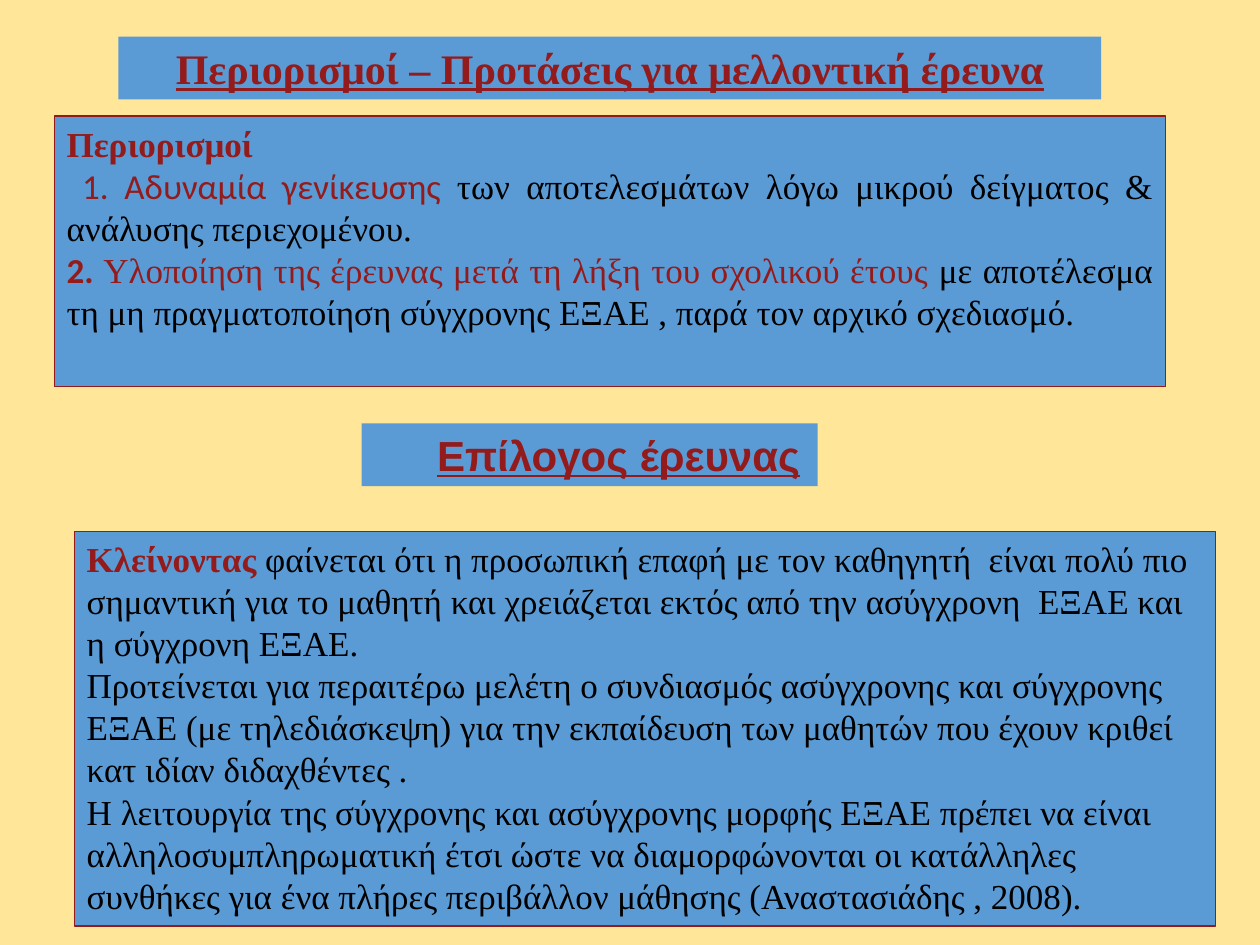
"""Build a slide on research limitations, proposals and the epilogue."""
from dataclasses import dataclass

from pptx import Presentation
from pptx.dml.color import RGBColor
from pptx.enum.shapes import MSO_SHAPE as Preset
from pptx.enum.text import MSO_ANCHOR as Anchor, PP_ALIGN as Align
from pptx.util import Inches, Pt

COLOURS = {"page": "FFE699", "panel": "5B9BD5", "accent": "931B1B",
           "body": "000000"}
SERIF, SANS, HEADING = "Times New Roman", "Calibri", "Arial"
COLUMNS, ROWS = 100, 75


@dataclass(frozen=True)
class Style:
    size: int = 20
    face: str = SERIF
    colour: str = "body"
    bold: bool = False
    underline: bool = False


@dataclass(frozen=True)
class Phrase:
    text: str
    style: Style


@dataclass(frozen=True)
class Panel:
    column: float
    row: float
    columns: float
    rows: float
    paragraphs: list[list[Phrase]]
    align: Align = Align.LEFT
    outlined: bool = False
    wrapped: bool = True
    level: int = 0
    space_before: int = 0
    space_after: int = 0


BODY = Style()
ACCENT = Style(colour="accent")
STRONG = Style(colour="accent", bold=True)
TITLE = Style(24, SERIF, "accent", True, True)
SUBTITLE = Style(24, HEADING, "accent", True, True)

PANELS = [
    Panel(9.4, 2.9, 78, 5, [
        [Phrase("Περιορισμοί – Προτάσεις για μελλοντική έρευνα", TITLE)],
    ], Align.CENTER),
    Panel(4.3, 9.2, 88.2, 21.5, [
        [Phrase("Περιορισμοί ", STRONG)],
        [Phrase(" 1. Αδυναμία γενίκευσης ", Style(face=SANS, colour="accent")),
         Phrase("των αποτελεσμάτων λόγω μικρού δείγματος & ανάλυσης "
                "περιεχομένου.", BODY)],
        [Phrase("2. ", Style(face=SANS, colour="accent", bold=True)),
         Phrase("Υλοποίηση της έρευνας μετά τη λήξη του σχολικού έτους",
                ACCENT),
         Phrase(" με αποτέλεσμα τη μη πραγματοποίηση σύγχρονης ΕΞΑΕ , "
                "παρά τον αρχικό σχεδιασμό. ", BODY)],
    ], Align.JUSTIFY, outlined=True),
    Panel(28.7, 33.6, 36.2, 5, [
        [Phrase("Επίλογος έρευνας", SUBTITLE)],
    ], wrapped=False, level=1, space_before=12, space_after=3),
    Panel(5.9, 42.2, 90.6, 31.3, [
        [Phrase("Κλείνοντας", STRONG),
         Phrase(" φαίνεται ότι η προσωπική επαφή με τον καθηγητή  είναι πολύ "
                "πιο σημαντική για το μαθητή και χρειάζεται εκτός από την "
                "ασύγχρονη  ΕΞΑΕ και η σύγχρονη ΕΞΑΕ.", BODY)],
        [Phrase("Προτείνεται για περαιτέρω μελέτη ο συνδιασμός ασύγχρονης και "
                "σύγχρονης ΕΞΑΕ (με τηλεδιάσκεψη) για την εκπαίδευση των "
                "μαθητών που έχουν κριθεί κατ ιδίαν διδαχθέντες .", BODY)],
        [Phrase("Η λειτουργία της σύγχρονης και ασύγχρονης μορφής ΕΞΑΕ πρέπει "
                "να είναι αλληλοσυμπληρωματική έτσι ώστε να διαμορφώνονται οι "
                "κατάλληλες συνθήκες για ένα πλήρες περιβάλλον μάθησης "
                "(Αναστασιάδης , 2008).", BODY)],
    ], outlined=True),
]


def rgb(name: str) -> RGBColor:
    return RGBColor.from_string(COLOURS[name])


def apply_style(font, style: Style) -> None:
    font.size, font.name = Pt(style.size), style.face
    font.bold, font.underline = style.bold, style.underline
    font.color.rgb = rgb(style.colour)


def write_paragraph(paragraph, phrases: list[Phrase], panel: Panel) -> None:
    paragraph.alignment = panel.align
    paragraph.level = panel.level
    paragraph.space_before = Pt(panel.space_before)
    paragraph.space_after = Pt(panel.space_after)
    uniform = len({phrase.style for phrase in phrases}) == 1
    if uniform:
        apply_style(paragraph.font, phrases[0].style)
    for phrase in phrases:
        run = paragraph.add_run()
        run.text = phrase.text
        if not uniform:
            apply_style(run.font, phrase.style)


def draw_panel(slide, panel: Panel, cell_width: float,
               cell_height: float) -> None:
    box = slide.shapes.add_shape(
        Preset.RECTANGLE,
        round(panel.column * cell_width), round(panel.row * cell_height),
        round(panel.columns * cell_width), round(panel.rows * cell_height))
    box.shadow.inherit = False
    box.fill.solid()
    box.fill.fore_color.rgb = rgb("panel")
    if panel.outlined:
        box.line.color.rgb = rgb("accent")
        box.line.width = Pt(0.75)
    else:
        box.line.fill.background()
    frame = box.text_frame
    frame.word_wrap = panel.wrapped
    frame.vertical_anchor = Anchor.TOP
    for index, phrases in enumerate(panel.paragraphs):
        paragraph = frame.add_paragraph() if index else frame.paragraphs[0]
        write_paragraph(paragraph, phrases, panel)


def main() -> None:
    deck = Presentation()
    deck.slide_width, deck.slide_height = Inches(10), Inches(7.5)
    slide = deck.slides.add_slide(deck.slide_layouts[6])
    slide.background.fill.solid()
    slide.background.fill.fore_color.rgb = rgb("page")
    for panel in PANELS:
        draw_panel(slide, panel, deck.slide_width / COLUMNS,
                   deck.slide_height / ROWS)
    deck.save("out.pptx")


if __name__ == "__main__":
    main()
